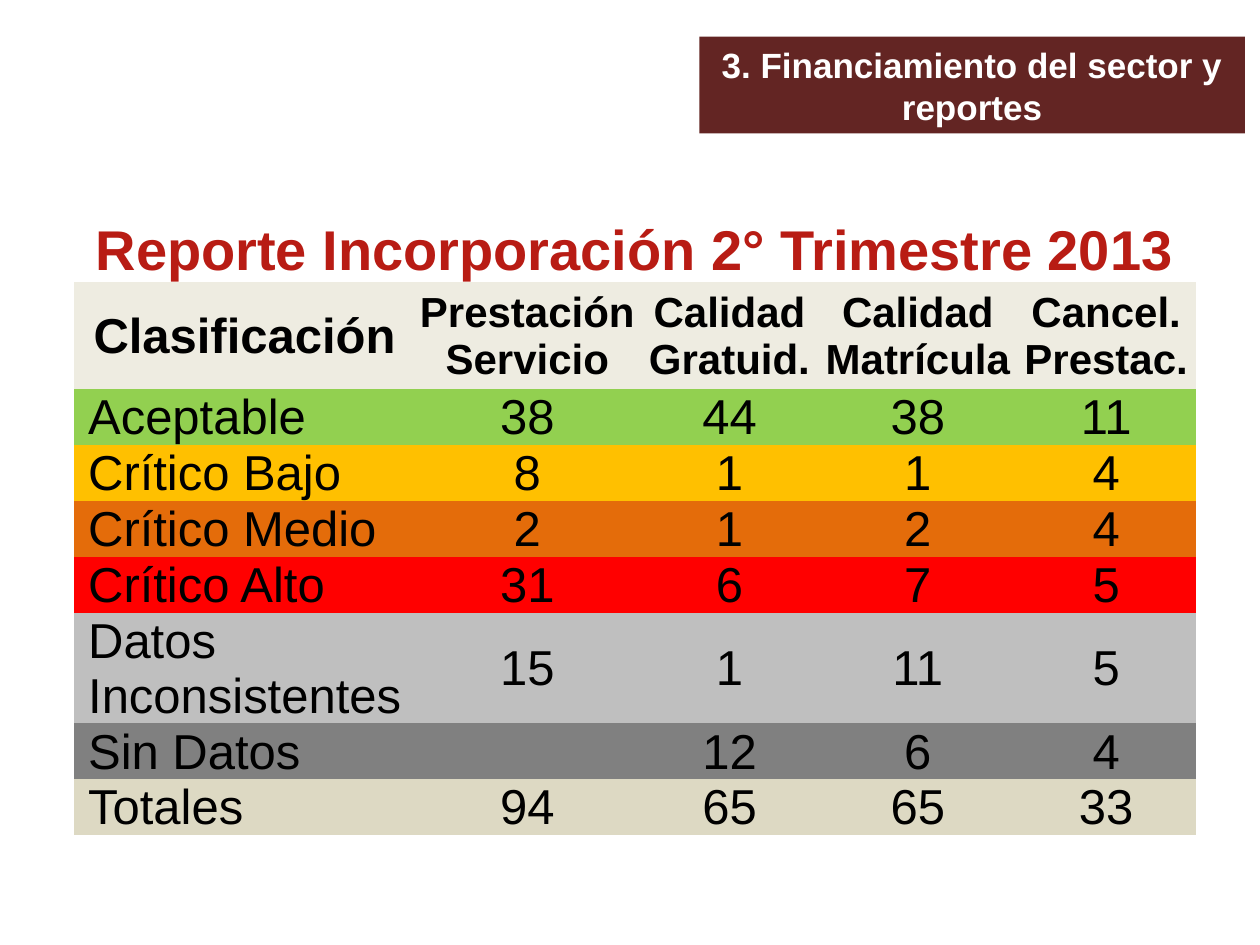
import pptx
import pptx.dml.color
import pptx.enum.shapes
import pptx.enum.text
import pptx.oxml.ns
import pptx.util

Inches = pptx.util.Inches
RGBColor = pptx.dml.color.RGBColor
ALIGN = pptx.enum.text.PP_ALIGN
ANCHOR = pptx.enum.text.MSO_ANCHOR

FONT = "Arial"
PLAIN_TABLE_STYLE = "{2D5ABB26-0587-4C30-8999-92F81FD0307C}"
BLACK = RGBColor(0x00, 0x00, 0x00)
WHITE = RGBColor(0xFF, 0xFF, 0xFF)
MAROON = RGBColor(0x63, 0x25, 0x23)
TITLE_RED = RGBColor(0xB8, 0x1C, 0x14)
CREAM = RGBColor(0xEE, 0xEC, 0xE1)
GREEN = RGBColor(0x92, 0xD0, 0x50)
AMBER = RGBColor(0xFF, 0xC0, 0x00)
ORANGE = RGBColor(0xE4, 0x6C, 0x0A)
RED = RGBColor(0xFF, 0x00, 0x00)
SILVER = RGBColor(0xBF, 0xBF, 0xBF)
GRAY = RGBColor(0x80, 0x80, 0x80)
SAND = RGBColor(0xDD, 0xD9, 0xC3)

TITLE = "Reporte Incorporación 2° Trimestre 2013"
HEADINGS = ["Clasificación", "Prestación Servicio", "Calidad Gratuid.",
            "Calidad Matrícula", "Cancel.\nPrestac."]
RATINGS = [
    (GREEN, ["Aceptable", "38", "44", "38", "11"]),
    (AMBER, ["Crítico Bajo", "8", "1", "1", "4"]),
    (ORANGE, ["Crítico Medio", "2", "1", "2", "4"]),
    (RED, ["Crítico Alto", "31", "6", "7", "5"]),
    (SILVER, ["Datos Inconsistentes", "15", "1", "11", "5"]),
    (GRAY, ["Sin Datos", "", "12", "6", "4"]),
    (SAND, ["Totales", "94", "65", "65", "33"]),
]
COLUMN_WIDTHS = [2.7, 1.79, 1.42, 1.57, 1.42]
ROW_HEIGHTS = [0.71, 0.85, 0.44, 0.44, 0.44, 0.44, 0.87, 0.44, 0.44]


def write_text(frame, text, size, color, bold=False, align=ALIGN.CENTER):
    """Fill a text frame with evenly formatted paragraphs."""
    frame.text = text
    for para in frame.paragraphs:
        para.alignment = align
        para.font.name = FONT
        para.font.size = pptx.util.Pt(size)
        para.font.bold = bold
        para.font.color.rgb = color


def fill_cell(cell, text, size, fill=None, color=BLACK, bold=False, label=False):
    """Set the margins, fill and text of one table cell."""
    cell.margin_left = Inches(0.11 if label else 0.01)
    cell.margin_right = cell.margin_top = Inches(0.01)
    cell.margin_bottom = 0
    cell.vertical_anchor = ANCHOR.MIDDLE
    if fill is None:
        cell.fill.background()
    else:
        cell.fill.solid()
        cell.fill.fore_color.rgb = fill
    write_text(cell.text_frame, text, size, color, bold,
               ALIGN.LEFT if label else ALIGN.CENTER)


def add_section_banner(page):
    """Add the section name at the top right."""
    box = page.shapes.add_shape(
        pptx.enum.shapes.MSO_SHAPE.RECTANGLE,
        Inches(5.55), Inches(0.29), Inches(4.33), Inches(0.77))
    box.shadow.inherit = False
    box.fill.solid()
    box.fill.fore_color.rgb = MAROON
    box.line.fill.background()
    box.text_frame.word_wrap = True
    write_text(box.text_frame, "3. Financiamiento del sector y reportes",
               20, WHITE, bold=True)


def add_plain_table(page):
    """Add an empty table without banding or borders."""
    frame = page.shapes.add_table(
        len(ROW_HEIGHTS), len(COLUMN_WIDTHS), Inches(0.59), Inches(1.53),
        Inches(sum(COLUMN_WIDTHS)), Inches(sum(ROW_HEIGHTS)))
    table = frame.table
    table.first_row = table.horz_banding = False
    for style in frame.element.iter(pptx.oxml.ns.qn("a:tableStyleId")):
        style.text = PLAIN_TABLE_STYLE
    for column, width in zip(table.columns, COLUMN_WIDTHS):
        column.width = Inches(width)
    for row, height in zip(table.rows, ROW_HEIGHTS):
        row.height = Inches(height)
    return table


def add_report(page):
    """Add the quarterly report with its title, headings and ratings."""
    table = add_plain_table(page)
    title = table.cell(0, 0)
    title.merge(table.cell(0, len(COLUMN_WIDTHS) - 1))
    fill_cell(title, TITLE, 32, color=TITLE_RED, bold=True)
    title.vertical_anchor = ANCHOR.BOTTOM
    for index, heading in enumerate(HEADINGS):
        fill_cell(table.cell(1, index), heading, 24 if index else 28,
                  CREAM, bold=True)
    for row, (fill, values) in enumerate(RATINGS, start=2):
        for index, value in enumerate(values):
            fill_cell(table.cell(row, index), value, 28, fill, label=index == 0)


def main():
    """Build and save the slide."""
    deck = pptx.Presentation()
    deck.slide_width, deck.slide_height = Inches(10), Inches(7.5)
    page = deck.slides.add_slide(deck.slide_layouts[6])
    add_report(page)
    add_section_banner(page)
    deck.save("out.pptx")


if __name__ == "__main__":
    main()
